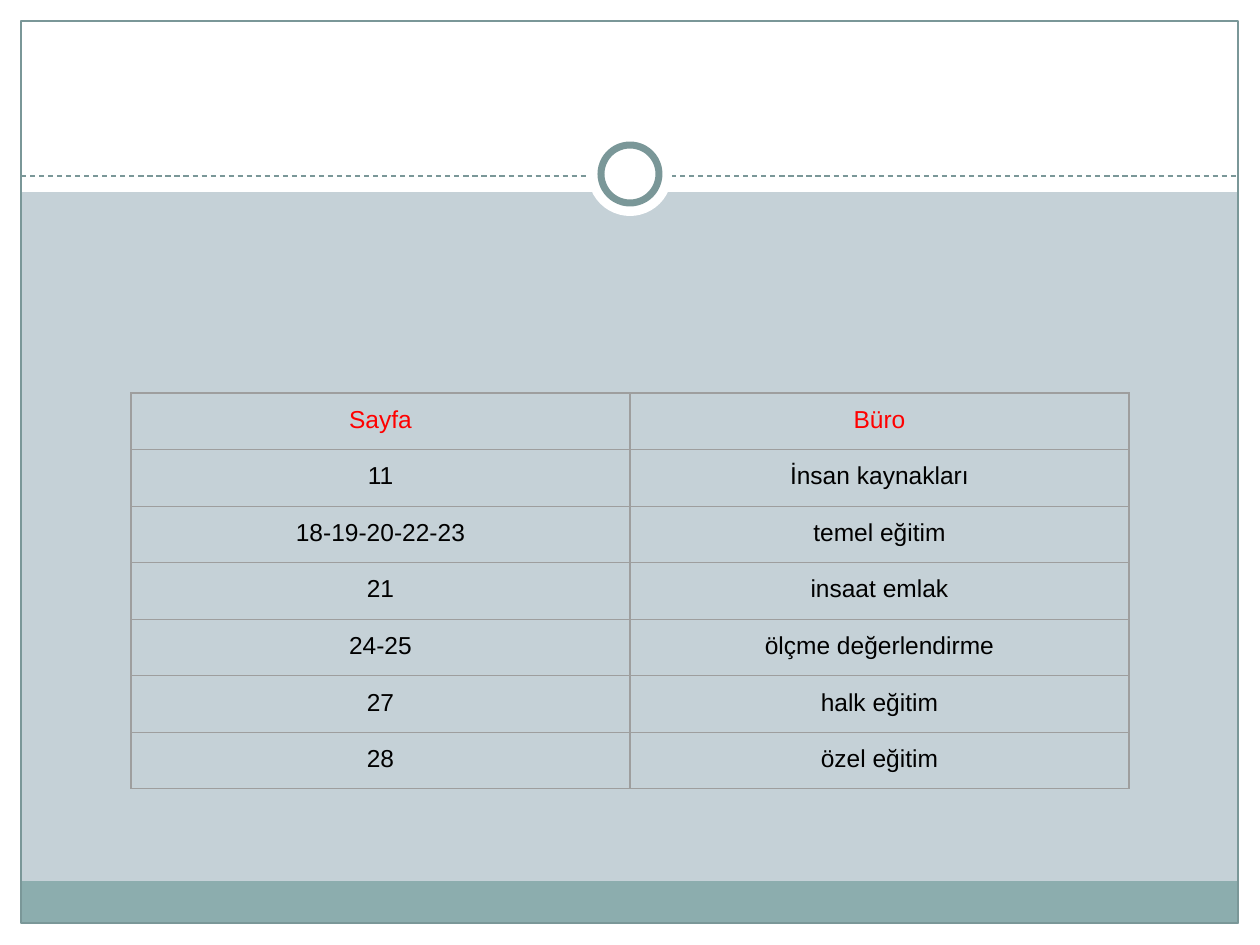
from dataclasses import dataclass

from lxml import etree
from pptx import Presentation
from pptx.dml.color import RGBColor
from pptx.enum.dml import MSO_LINE
from pptx.enum.shapes import MSO_CONNECTOR, MSO_SHAPE
from pptx.enum.text import PP_ALIGN
from pptx.oxml.ns import qn
from pptx.util import Emu, Pt

RECTANGLE = MSO_SHAPE.RECTANGLE
OVAL = MSO_SHAPE.OVAL
STRAIGHT = MSO_CONNECTOR.STRAIGHT
DASH = MSO_LINE.DASH
CENTER = PP_ALIGN.CENTER

EMU_PER_PX = 914400 / 126
WHITE = "FFFFFF"
TEAL = "7A9798"
FOOTER_TEAL = "8CADAE"
BACKDROP = "C5D1D7"
GRID_GREY = "9E9E9E"
RED = "FF0000"
BLACK = "000000"
THIN = 0.75
CELL_INSET = 13


@dataclass(frozen=True)
class Panel:
    left: int
    top: int
    width: int
    height: int
    fill: str | None = None
    line: str | None = None
    weight: float = THIN
    preset: int = RECTANGLE


PANELS_BELOW_DIVIDER = [
    Panel(0, 924, 1260, 21, WHITE),
    Panel(0, 0, 1260, 192, WHITE),
    Panel(0, 0, 21, 945, WHITE),
    Panel(1239, 0, 21, 945, WHITE),
    Panel(21, 881, 1217, 43, FOOTER_TEAL),
    Panel(21, 21, 1217, 902, line=TEAL),
]
RING_PANELS = [
    Panel(588, 132, 84, 84, WHITE, preset=OVAL),
    Panel(601, 145, 58, 58, WHITE, TEAL, 4, OVAL),
]
OFFICES_BY_PAGE = [
    ("Sayfa", "Büro"),
    ("11", "İnsan kaynakları"),
    ("18-19-20-22-23", "temel eğitim"),
    ("21", "insaat emlak"),
    ("24-25", "ölçme değerlendirme"),
    ("27", "halk eğitim"),
    ("28", "özel eğitim"),
]


def px(length: int) -> Emu:
    return Emu(round(length * EMU_PER_PX))


def color(value: str) -> RGBColor:
    return RGBColor.from_string(value)


def draw_panel(slide, panel: Panel) -> None:
    shape = slide.shapes.add_shape(
        panel.preset, px(panel.left), px(panel.top), px(panel.width), px(panel.height)
    )
    shape.shadow.inherit = False
    if panel.fill:
        shape.fill.solid()
        shape.fill.fore_color.rgb = color(panel.fill)
    else:
        shape.fill.background()
    if panel.line:
        shape.line.color.rgb = color(panel.line)
        shape.line.width = Pt(panel.weight)
    else:
        shape.line.fill.background()


def draw_divider(slide, left: int, right: int, y: int) -> None:
    divider = slide.shapes.add_connector(STRAIGHT, px(left), px(y), px(right), px(y))
    divider.line.color.rgb = color(TEAL)
    divider.line.width = Pt(THIN)
    divider.line.dash_style = DASH
    etree.SubElement(divider.element.spPr, qn("a:effectLst"))


def set_borders(cell) -> None:
    properties = cell._tc.get_or_add_tcPr()
    for position, side in enumerate(("lnL", "lnR", "lnT", "lnB")):
        border = etree.Element(qn(f"a:{side}"), w=str(Pt(THIN)))
        fill = etree.SubElement(border, qn("a:solidFill"))
        etree.SubElement(fill, qn("a:srgbClr"), val=GRID_GREY)
        properties.insert(position, border)


def fill_cell(cell, wording: str, text_color: str) -> None:
    cell.fill.background()
    set_borders(cell)
    cell.margin_left = cell.margin_right = px(CELL_INSET)
    cell.margin_top = cell.margin_bottom = px(CELL_INSET)
    paragraph = cell.text_frame.paragraphs[0]
    paragraph.alignment = CENTER
    run = paragraph.add_run()
    run.text = wording
    run.font.name = "Arial"
    run.font.size = Pt(14)
    run.font.bold = False
    run.font.color.rgb = color(text_color)


def draw_office_table(slide, left: int, top: int, width: int, height: int) -> None:
    offices = slide.shapes.add_table(
        len(OFFICES_BY_PAGE), len(OFFICES_BY_PAGE[0]),
        px(left), px(top), px(width), px(height),
    ).table
    offices.first_row = False
    offices.horz_banding = False
    for row, entries in enumerate(OFFICES_BY_PAGE):
        for column, wording in enumerate(entries):
            fill_cell(offices.cell(row, column), wording, BLACK if row else RED)


def main() -> None:
    presentation = Presentation()
    presentation.slide_width = px(1260)
    presentation.slide_height = px(945)
    slide = presentation.slides.add_slide(presentation.slide_layouts[6])
    slide.background.fill.solid()
    slide.background.fill.fore_color.rgb = color(BACKDROP)
    for panel in PANELS_BELOW_DIVIDER:
        draw_panel(slide, panel)
    draw_divider(slide, 21, 1238, 176)
    for panel in RING_PANELS:
        draw_panel(slide, panel)
    draw_office_table(slide, 131, 393, 998, 396)
    presentation.save("out.pptx")


if __name__ == "__main__":
    main()
